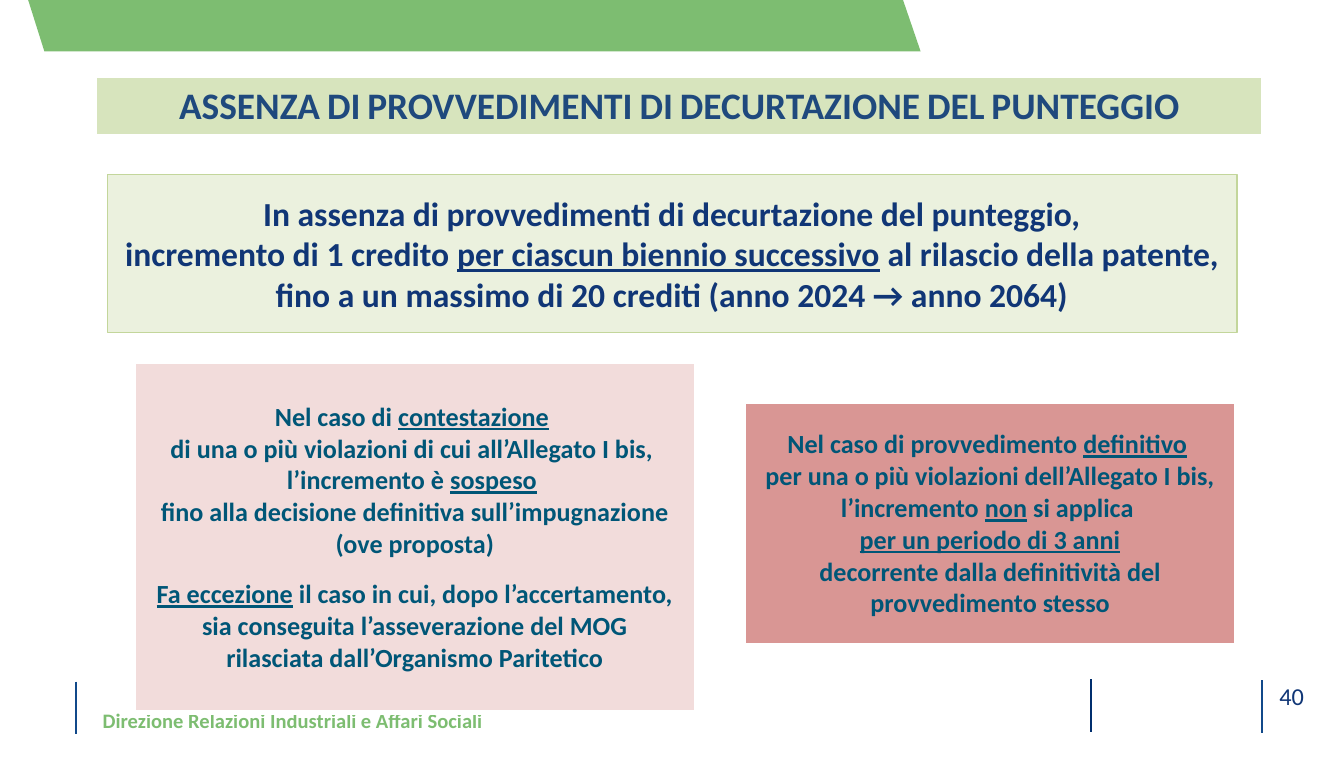
from lxml import etree
from pptx import Presentation
from pptx.dml.color import RGBColor
from pptx.enum.shapes import MSO_CONNECTOR as Connector, MSO_SHAPE as Shape
from pptx.enum.text import MSO_ANCHOR as Anchor, PP_ALIGN as Align
from pptx.oxml.ns import qn
from pptx.util import Pt

COLORS = {
    "green": "7DBD71", "title_fill": "D7E4BD", "title_text": "1F497D",
    "rule_fill": "EBF1DE", "rule_line": "C3D69B", "navy": "103676",
    "pink": "F2DCDB", "red": "D99694", "teal": "005677",
    "divider": "11498A", "dark_divider": "002E6E", "white": "FFFFFF",
}


def color(name):
    return RGBColor.from_string(COLORS[name])


def write(frame, lines, size, ink, bold=True, align=Align.CENTER, gap_before=None, caps="none"):
    for index, line in enumerate(lines):
        paragraph = frame.paragraphs[0] if index == 0 else frame.add_paragraph()
        paragraph.alignment = align
        if index == gap_before:
            paragraph.space_before = Pt(9.8)
        for part, text in enumerate(line.split("_")):
            if text:
                run = paragraph.add_run()
                run.text = text
                style = {"name": "Calibri", "size": Pt(size), "bold": bold, "underline": part % 2 == 1}
                for attribute, value in style.items():
                    setattr(run.font, attribute, value)
                run.font.color.rgb = color(ink)
                run._r.get_or_add_rPr().set("cap", caps)


presentation = Presentation()
presentation.slide_width, presentation.slide_height = Pt(720), Pt(405.36)
slide = presentation.slides.add_slide(presentation.slide_layouts[6])
shapes = slide.shapes

for x, y, ink in [(40.6, 365, "divider"), (676.2, 364.3, "divider"), (584.3, 363.8, "dark_divider")]:
    divider = shapes.add_connector(Connector.STRAIGHT, Pt(x), Pt(y), Pt(x), Pt(y + 28.1))
    divider.line.color.rgb = color(ink)
    divider.line.width = Pt(1)
    etree.SubElement(divider.element.spPr, qn("a:effectLst"))

rule = shapes.add_shape(Shape.RECTANGLE, Pt(57.5), Pt(93.4), Pt(605.2), Pt(84.7))
rule.shadow.inherit = False
rule.fill.solid()
rule.fill.fore_color.rgb = color("rule_fill")
rule.line.color.rgb = color("rule_line")
rule.line.width = Pt(0.75)
number = shapes.add_textbox(Pt(678.2), Pt(365), Pt(27.4), Pt(17.3))
footer = shapes.add_textbox(Pt(55), Pt(365), Pt(317.5), Pt(28.1))
for shape, top_margin in [(rule, 0), (number, 0), (footer, 15.4)]:
    layout = {"margin_left": 0, "margin_right": 0, "margin_top": Pt(top_margin),
              "margin_bottom": 0, "word_wrap": True}
    for attribute, value in layout.items():
        setattr(shape.text_frame, attribute, value)
rule.text_frame.vertical_anchor = Anchor.MIDDLE

write(rule.text_frame, [
    "In assenza di provvedimenti di decurtazione del punteggio,",
    "incremento di 1 credito _per ciascun biennio successivo_ al rilascio della patente,",
    "fino a un massimo di 20 crediti (anno 2024 → anno 2064)",
], 18, "navy")
write(number.text_frame, ["40"], 13, "navy", bold=False)
write(footer.text_frame, ["Direzione Relazioni Industriali e Affari Sociali"], 11, "green", align=Align.LEFT)

definitive = [
    "Nel caso di provvedimento _definitivo_ ",
    "per una o più violazioni dell’Allegato I bis, l’incremento _non_ si applica ",
    "_per un periodo di 3 anni_",
    "decorrente dalla definitività del provvedimento stesso",
]
contested = [
    "Nel caso di _contestazione_ ",
    "di una o più violazioni di cui all’Allegato I bis, ",
    "l’incremento è _sospeso_ ",
    "fino alla decisione definitiva sull’impugnazione (ove proposta)",
    "_Fa eccezione_ il caso in cui, dopo l’accertamento,",
    "sia conseguita l’asseverazione del MOG",
    "rilasciata dall’Organismo Paritetico",
]
title = ["ASSENZA DI PROVVEDIMENTI DI DECURTAZIONE DEL PUNTEGGIO"]
panels = [
    ((399.4, 216, 262.1, 129.6), "red", definitive, 14, "teal", Anchor.MIDDLE, None, "none"),
    ((72.5, 194.4, 299.5, 187.2), "pink", contested, 14, "teal", Anchor.MIDDLE, 4, "none"),
    ((51.8, 41.4, 624.2, 31.7), "title_fill", title, 20, "title_text", Anchor.TOP, None, "small"),
]
for box, fill, lines, size, ink, anchor, gap_before, caps in panels:
    table = shapes.add_table(1, 1, *map(Pt, box)).table
    table.first_row = table.horz_banding = False
    cell = table.cell(0, 0)
    layout = {"margin_left": Pt(7.2), "margin_right": Pt(7.2), "margin_top": Pt(3.6),
              "margin_bottom": Pt(3.6), "vertical_anchor": anchor}
    for attribute, value in layout.items():
        setattr(cell, attribute, value)
    write(cell.text_frame, lines, size, ink, gap_before=gap_before, caps=caps)
    properties = cell._tc.get_or_add_tcPr()
    for side, width in [("L", 1), ("R", 1), ("T", 1), ("B", 3)]:
        border = etree.SubElement(properties, qn(f"a:ln{side}"), w=str(Pt(width)))
        solid = etree.SubElement(border, qn("a:solidFill"))
        etree.SubElement(solid, qn("a:srgbClr"), val=COLORS["white"])
    cell.fill.solid()
    cell.fill.fore_color.rgb = color(fill)

builder = shapes.build_freeform(Pt(15.1), 0)
builder.add_line_segments([(Pt(x), Pt(y)) for x, y in [(23.8, 27.5), (493.2, 27.5), (483.8, 0)]])
banner = builder.convert_to_shape()
banner.shadow.inherit = False
banner.fill.solid()
banner.fill.fore_color.rgb = color("green")
banner.line.fill.background()

presentation.save("out.pptx")
